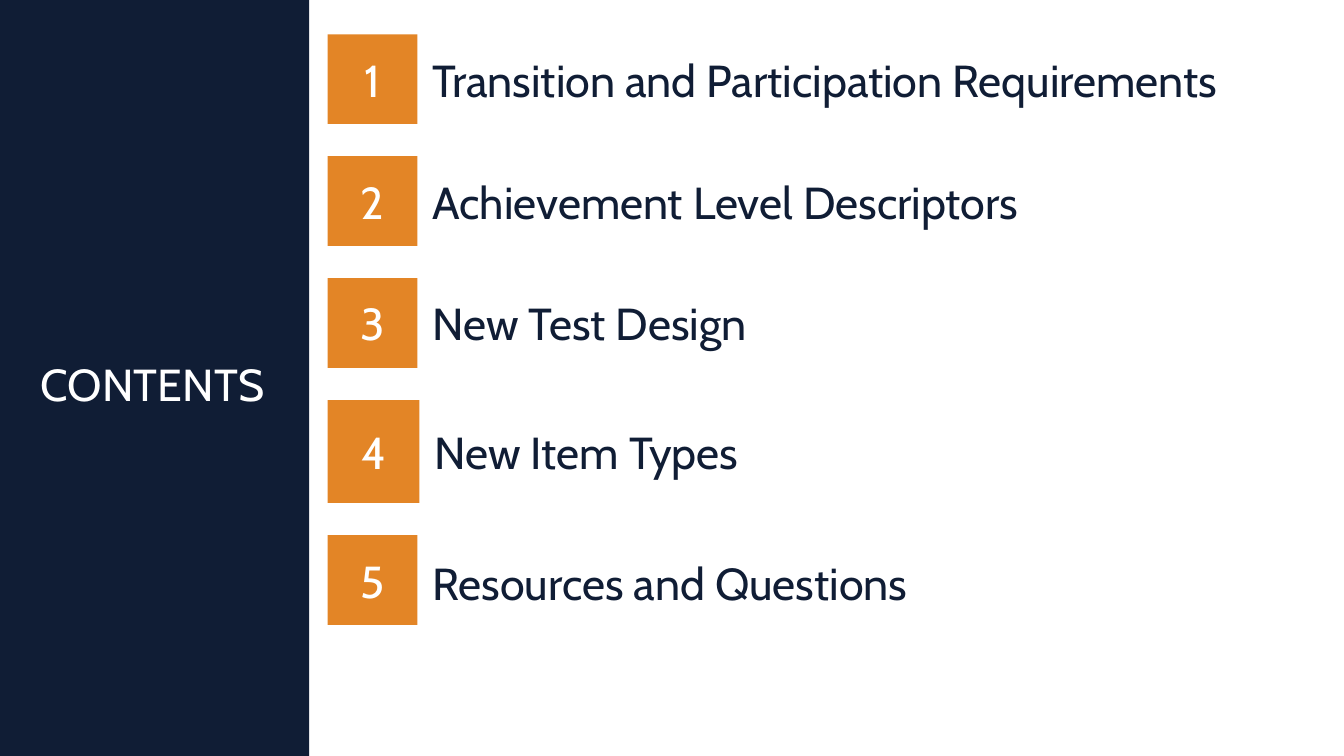
"""Build a contents slide with a dark side panel and five numbered topics."""
from pptx import Presentation
from pptx.dml.color import RGBColor as RGB
from pptx.enum.shapes import MSO_SHAPE as SHAPE
from pptx.enum.text import MSO_ANCHOR as ANCHOR, PP_ALIGN as ALIGN
from pptx.util import Inches, Pt

THEME = {
    "navy": RGB.from_string("101D35"),
    "orange": RGB.from_string("E38526"),
    "white": RGB.from_string("FFFFFF"),
    "font": "Cabin",
    "size": Pt(32),
}
WIDTH, HEIGHT = 13.33, 7.5
PANEL = 0.23 * WIDTH
LEFT, TOP, GAP = 3.25, 0.34, 0.32
LABEL_GAP = 0.05
TOPICS = [
    ("Transition and Participation Requirements", 0.89, 0.89, 8.73, 0),
    ("Achievement Level Descriptors", 0.89, 0.89, 8.73, 0),
    ("New Test Design", 0.89, 0.89, 8.73, 0),
    ("New Item Types", 0.91, 1.02, 9.02, 0),
    ("Resources and Questions", 0.89, 0.89, 8.73, 0.02),
]


def add_box(s, x, y, w, h, fill):
    sp = s.shapes.add_shape(SHAPE.RECTANGLE, *map(Inches, (x, y, w, h)))
    sp.shadow.inherit = False
    sp.fill.solid()
    sp.fill.fore_color.rgb = THEME[fill]
    sp.line.fill.background()
    return sp


def write(sp, text, color, align, anchor=ANCHOR.MIDDLE):
    tf = sp.text_frame
    tf.word_wrap = True
    tf.vertical_anchor = anchor
    p = tf.paragraphs[0]
    p.alignment = align
    r = p.add_run()
    r.text = text
    for name, value in {"name": THEME["font"], "size": THEME["size"]}.items():
        setattr(r.font, name, value)
    r.font.color.rgb = THEME[color]


prs = Presentation()
prs.slide_width, prs.slide_height = Inches(WIDTH), Inches(HEIGHT)
s = prs.slides.add_slide(prs.slide_layouts[6])

add_box(s, 0, 0, PANEL, HEIGHT, "navy")
title = s.shapes.add_textbox(*map(Inches, (0, 3.49, 3.03, 0.64)))
write(title, "CONTENTS", "white", ALIGN.CENTER, ANCHOR.TOP)

y = TOP
for number, (topic, w, h, label_w, drop) in enumerate(TOPICS, 1):
    write(add_box(s, LEFT, y, w, h, "orange"), str(number), "white", ALIGN.CENTER)
    x = LEFT + w + LABEL_GAP
    label = s.shapes.add_textbox(*map(Inches, (x, y + drop, label_w, h)))
    write(label, topic, "navy", ALIGN.LEFT)
    y += h + GAP

prs.save("out.pptx")
